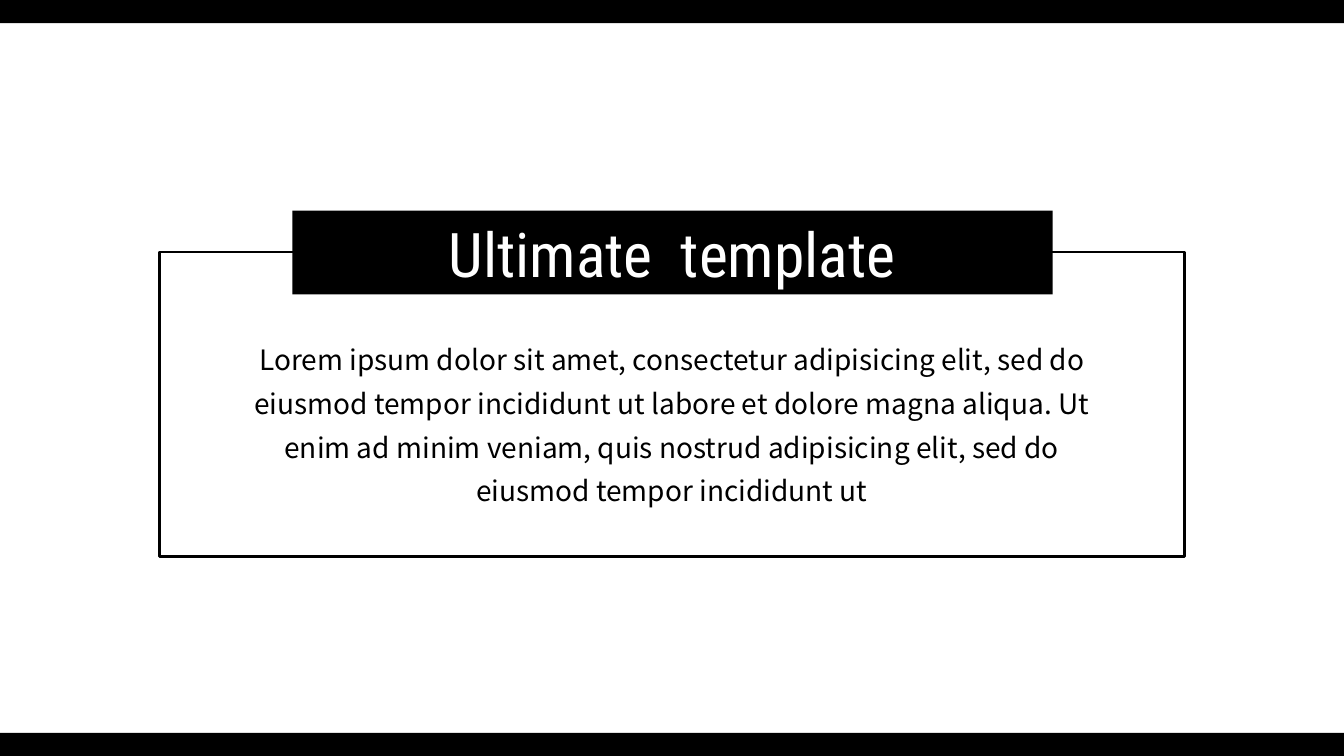
from pptx import Presentation
from pptx.dml.color import RGBColor
from pptx.enum.shapes import MSO_SHAPE
from pptx.enum.text import MSO_ANCHOR, PP_ALIGN
from pptx.util import Inches, Pt

BLACK = RGBColor(0x00, 0x00, 0x00)
WHITE = RGBColor(0xFF, 0xFF, 0xFF)
TITLE_FONT = "Roboto Condensed"
BODY_FONT = "Noto Sans CJK SC"
SLIDE_W, SLIDE_H = 13.33, 7.5
BAR_H = 0.23
BODY = (
    "Lorem ipsum dolor sit amet, consectetur adipisicing elit, sed do "
    "eiusmod tempor incididunt ut labore et dolore magna aliqua. Ut enim "
    "ad minim veniam, quis nostrud adipisicing elit, sed do eiusmod "
    "tempor incididunt ut"
)


def fill_black(sp):
    sp.fill.solid()
    sp.fill.fore_color.rgb = BLACK


def add_rect(slide, x, y, w, h):
    sp = slide.shapes.add_shape(
        MSO_SHAPE.RECTANGLE, Inches(x), Inches(y), Inches(w), Inches(h))
    sp.shadow.inherit = False
    return sp


def add_bar(slide, y):
    sp = add_rect(slide, 0, y, SLIDE_W, BAR_H)
    fill_black(sp)
    sp.line.fill.background()


def add_frame(slide, x, y, w, h):
    sp = add_rect(slide, x, y, w, h)
    sp.fill.background()
    sp.line.color.rgb = BLACK
    sp.line.width = Pt(2)


def write_centred(sp, text, font, size, color, spacing=1.0):
    tf = sp.text_frame
    tf.word_wrap = True
    tf.margin_left = tf.margin_right = Inches(0.1)
    tf.margin_top = tf.margin_bottom = Inches(0.05)
    tf.text = text
    p = tf.paragraphs[0]
    p.alignment = PP_ALIGN.CENTER
    p.line_spacing = spacing
    p.space_before = Pt(0)
    r = p.runs[0]
    r.font.name = font
    r.font.size = Pt(size)
    r.font.color.rgb = color


def add_body(slide, text, x, y, w, h):
    sp = slide.shapes.add_textbox(Inches(x), Inches(y), Inches(w), Inches(h))
    write_centred(sp, text, BODY_FONT, 20, BLACK, 1.3)


def place_title(slide, text, x, y, w, h):
    sp = slide.shapes.title
    sp.left, sp.top, sp.width, sp.height = map(Inches, (x, y, w, h))
    fill_black(sp)
    write_centred(sp, text, TITLE_FONT, 44, WHITE)
    sp.text_frame.vertical_anchor = MSO_ANCHOR.MIDDLE
    slide.shapes.element.append(sp.element)


def main():
    prs = Presentation()
    prs.slide_width, prs.slide_height = Inches(SLIDE_W), Inches(SLIDE_H)
    slide = prs.slides.add_slide(prs.slide_layouts[5])
    slide.background.fill.solid()
    slide.background.fill.fore_color.rgb = WHITE

    add_body(slide, BODY, 2.38, 3.25, 8.57, 1.83)
    add_frame(slide, 1.58, 2.5, 10.17, 3.02)
    place_title(slide, "Ultimate  template", 2.9, 2.09, 7.54, 0.83)
    for y in (0, SLIDE_H - BAR_H):
        add_bar(slide, y)

    prs.save("out.pptx")


if __name__ == "__main__":
    main()
